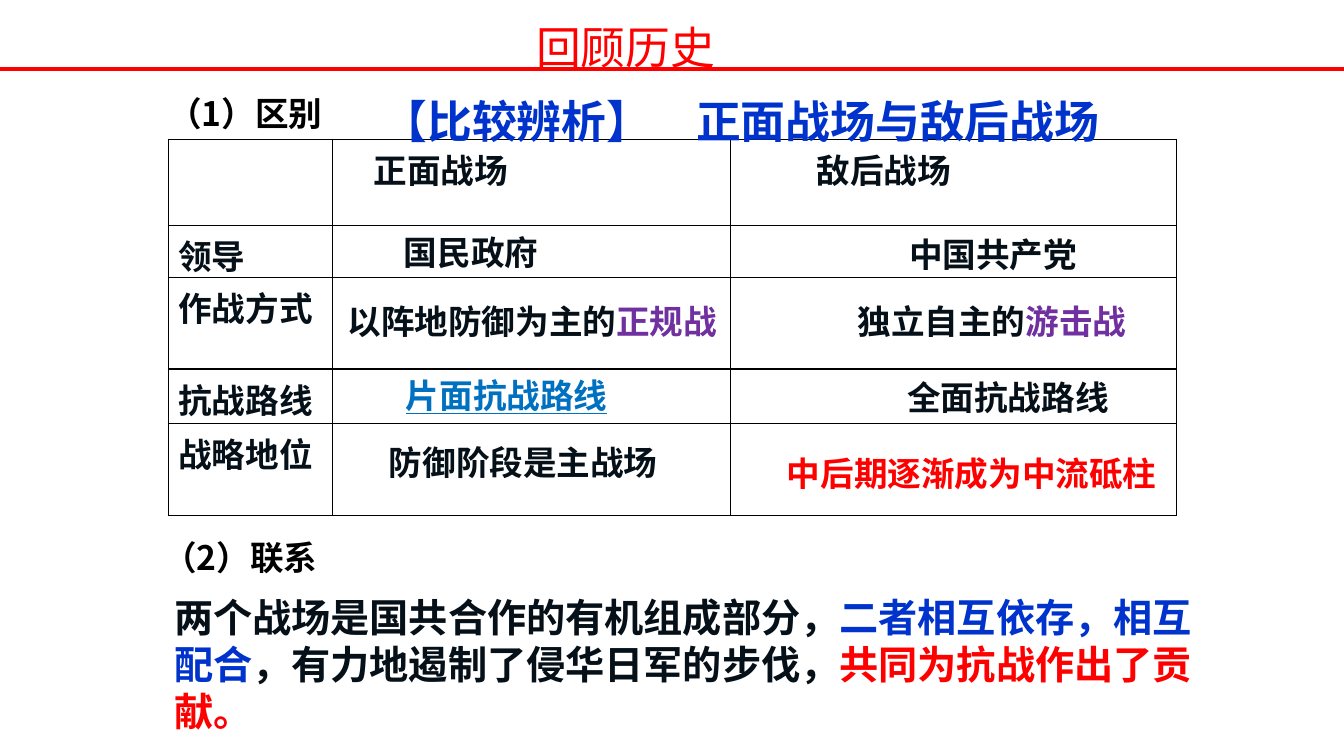
from lxml import etree
from pptx import Presentation
from pptx import util as u
from pptx.dml.color import RGBColor
from pptx.enum import shapes, text
from pptx.oxml.ns import qn

BLACK = RGBColor(0x00, 0x00, 0x00)
INK = RGBColor(0x06, 0x10, 0x18)
RED = RGBColor(0xFF, 0x00, 0x00)
BLUE = RGBColor(0x00, 0x33, 0xCC)
SKY = RGBColor(0x00, 0x70, 0xC0)
PURPLE = RGBColor(0x70, 0x30, 0xA0)

COLUMNS = [4.14, 10.03, 11.23]
ROWS = [2.18, 1.3, 2.31, 1.37, 2.31]
ASPECTS = ["领导", "作战方式", "抗战路线", "战略地位"]
HEADERS = [("正面战场", 1.04), ("敌后战场", 2.17)]  # label, left margin

# left, top, width, runs
ANSWERS = [
    (9.93, 5.72, 3.96, [("国民政府", INK)]),
    (22.66, 5.77, 4.8, [("中国共产党", INK)]),
    (8.51, 7.47, 10.34, [("以阵地防御为主的", INK), ("正规战", PURPLE)]),
    (21.36, 7.47, 7.39, [("独立自主的", INK), ("游击战", PURPLE)]),
    (22.61, 9.37, 5.66, [("全面抗战路线", INK)]),
    (9.55, 11, 7.39, [("防御阶段是主战场", INK)]),
    (19.58, 11.3, 11.71, [("中后期逐渐成为中流砥柱", RED)]),
]
CONNECTION = [
    ("两个战场是国共合作的有机组成部分，", INK),
    ("二者相互依存，相互配合", BLUE),
    ("，有力地遏制了侵华日军的步伐，", INK),
    ("共同为抗战作出了贡献。", RED),
]


class Board:
    font = "Noto Sans CJK SC"

    def __init__(self, slide):
        self.s = slide

    def add_runs(self, p, runs, size=24, bold=True):
        """Fill a paragraph with (text, colour) runs in the slide's font."""
        f = p.font
        f.name, f.size, f.bold = self.font, u.Pt(size), bold
        latin = f._element.find(qn("a:latin"))
        ea = etree.Element(qn("a:ea"), typeface=self.font)
        latin.addnext(ea)
        if len(runs) == 1:
            f.color.rgb = runs[0][1]
        for words, color in runs:
            r = p.add_run()
            r.text = words
            if len(runs) > 1:
                r.font.color.rgb = color

    def text(self, x, y, w, h, runs, size=24, bold=True, middle=False):
        sp = self.s.shapes.add_textbox(u.Cm(x), u.Cm(y), u.Cm(w), u.Cm(h))
        tf = sp.text_frame
        tf.word_wrap = True
        tf.auto_size = text.MSO_AUTO_SIZE.SHAPE_TO_FIT_TEXT
        if middle:
            tf.vertical_anchor = text.MSO_ANCHOR.MIDDLE
        p = tf.paragraphs[0]
        self.add_runs(p, runs, size, bold)
        return p

    def border(self, cell):
        pr = cell._tc.get_or_add_tcPr()
        for i, side in enumerate(("a:lnL", "a:lnR", "a:lnT", "a:lnB")):
            ln = etree.Element(qn(side), w=str(u.Pt(1)))
            fill = etree.SubElement(ln, qn("a:solidFill"))
            etree.SubElement(fill, qn("a:srgbClr"), val=str(BLACK))
            pr.insert(i, ln)

    def table(self, x, y, columns, rows):
        """Add an unfilled grid with thin black borders."""
        t = self.s.shapes.add_table(
            len(rows), len(columns), u.Cm(x), u.Cm(y),
            u.Cm(sum(columns)), u.Cm(sum(rows))).table
        t.first_row = t.horz_banding = False
        for col, w in zip(t.columns, columns):
            col.width = u.Cm(w)
        for row, h in zip(t.rows, rows):
            row.height = u.Cm(h)
        for cell in t.iter_cells():
            cell.fill.background()
            self.border(cell)
        return t

    def line(self, x1, y1, x2, y2, color, width):
        c = self.s.shapes.add_connector(
            shapes.MSO_CONNECTOR.STRAIGHT,
            u.Cm(x1), u.Cm(y1), u.Cm(x2), u.Cm(y2))
        c.line.color.rgb = color
        c.line.width = u.Pt(width)
        etree.SubElement(c._element.spPr, qn("a:effectLst"))


def main():
    prs = Presentation()
    prs.slide_width, prs.slide_height = u.Cm(33.87), u.Cm(19.05)
    board = Board(prs.slides.add_slide(prs.slide_layouts[6]))

    board.text(3.99, 2.21, 19.61, 1.27, [("（1）区别", BLACK)], middle=True)

    t = board.table(4.24, 3.51, COLUMNS, ROWS)
    for col, (label, margin) in enumerate(HEADERS, 1):
        cell = t.cell(0, col)
        cell.margin_left = u.Cm(margin)
        board.add_runs(cell.text_frame.paragraphs[0], [(label, INK)])
    for row, label in enumerate(ASPECTS, 1):
        board.add_runs(t.cell(row, 0).text_frame.paragraphs[0], [(label, INK)])

    board.text(3.86, 13.39, 25.4, 1.3, [("（2）联系", BLACK)], middle=True)

    p = board.text(9.37, 1.57, 18.62, 2.06,
                   [("【比较辨析】　正面战场与敌后战场", BLUE)], size=32)
    p.alignment = text.PP_ALIGN.CENTER
    p.line_spacing = 1.5
    p.space_before = u.Pt(6.4)

    for x, y, w, runs in ANSWERS:
        board.text(x, y, w, 1.3, runs)
    p = board.text(9.98, 9.32, 5.66, 1.3, [("片面抗战路线", SKY)])
    p.font.underline = True

    board.text(4.14, 14.83, 26.26, 3.81, CONNECTION, size=28)
    board.text(13.26, 0.38, 17.93, 1.63, [("回顾历史", RED)], size=32, bold=False)
    board.line(0, 1.73, 33.87, 1.73, RED, 3)

    prs.save("out.pptx")


if __name__ == "__main__":
    main()
